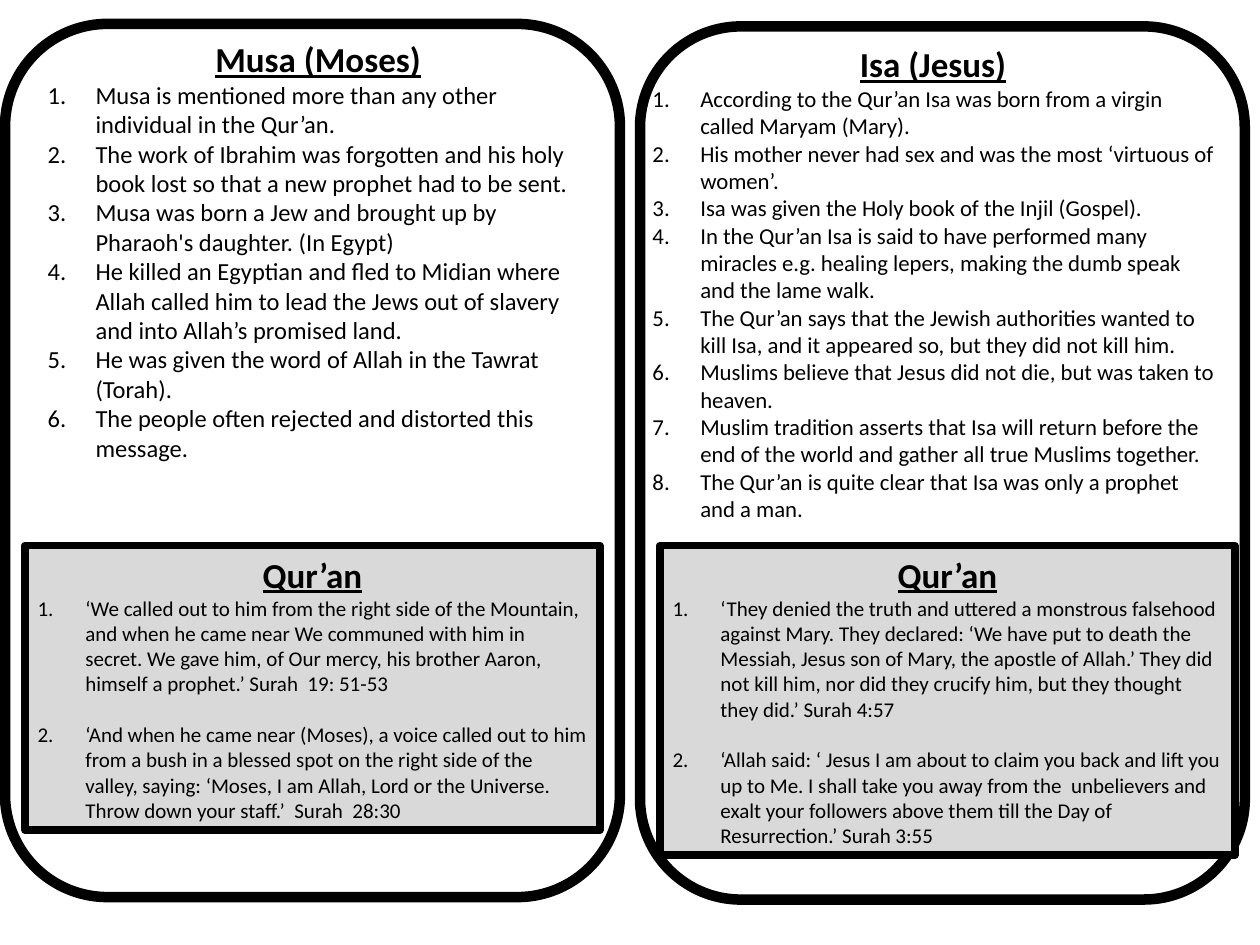
import pptx
import pptx.dml.color
import pptx.enum.shapes
import pptx.enum.text
import pptx.oxml
import pptx.oxml.ns
import pptx.util

COLUMNS, ROWS = 100, 75


def colour(hex_code):
    return pptx.dml.color.RGBColor.from_string(hex_code)


class ProphetSheet:
    """Draws cards, notes and quotations on a slide grid in one style."""

    font_name = "Calibri"
    ink, paper, shade = "000000", "FFFFFF", "D9D9D9"
    heading_size = 20
    indent = pptx.util.Inches(0.38)

    def __init__(self, deck):
        self.slide = deck.slides.add_slide(deck.slide_layouts[6])
        self.column = deck.slide_width / COLUMNS
        self.row = deck.slide_height / ROWS

    def place(self, left, top, width, height):
        return (round(left * self.column), round(top * self.row),
                round(width * self.column), round(height * self.row))

    def outlined(self, preset, area, fill, weight):
        shape = self.slide.shapes.add_shape(preset, *self.place(*area))
        shape.shadow.inherit = False
        shape.fill.solid()
        shape.fill.fore_color.rgb = colour(fill)
        shape.line.color.rgb = colour(self.ink)
        shape.line.width = pptx.util.Pt(weight)
        return shape

    def card(self, area):
        self.outlined(pptx.enum.shapes.MSO_SHAPE.ROUNDED_RECTANGLE, area, self.paper, 6)

    def notes(self, area, heading, points, size):
        box = self.slide.shapes.add_textbox(*self.place(*area))
        self.numbered_list(box.text_frame, heading, points, size, 0)

    def quotes(self, area, passages):
        box = self.outlined(pptx.enum.shapes.MSO_SHAPE.RECTANGLE, area, self.shade, 4.5)
        self.numbered_list(box.text_frame, "Qur’an", passages, 12, 14.65)

    def numbered_list(self, frame, heading, items, size, gap):
        frame.word_wrap = True
        frame.auto_size = pptx.enum.text.MSO_AUTO_SIZE.SHAPE_TO_FIT_TEXT
        title = frame.paragraphs[0]
        title.text = heading
        title.alignment = pptx.enum.text.PP_ALIGN.CENTER
        self.style(title, self.heading_size, True)
        for index, item in enumerate(items):
            point = frame.add_paragraph()
            point.text = item
            point.alignment = pptx.enum.text.PP_ALIGN.LEFT
            point.space_before = pptx.util.Pt(gap if index else 0)
            self.number(point)
            self.style(point, size, False)

    def number(self, paragraph):
        properties = paragraph._p.get_or_add_pPr()
        properties.set("marL", str(self.indent))
        properties.set("indent", str(-self.indent))
        properties.append(pptx.oxml.parse_xml(
            f'<a:buAutoNum {pptx.oxml.ns.nsdecls("a")} type="arabicPeriod"/>'))

    def style(self, paragraph, size, is_heading):
        font = paragraph.font
        font.name = self.font_name
        font.size = pptx.util.Pt(size)
        font.bold = font.underline = is_heading
        font.color.rgb = colour(self.ink)


MUSA_POINTS = [
    "Musa is mentioned more than any other individual in the Qur’an.",
    "The work of Ibrahim was forgotten and his holy book lost so that a new prophet "
    "had to be sent.",
    "Musa was born a Jew and brought up by Pharaoh's daughter. (In Egypt)",
    "He killed an Egyptian and fled to Midian where Allah called him to lead the Jews "
    "out of slavery and into Allah’s promised land.",
    "He was given the word of Allah in the Tawrat (Torah).",
    "The people often rejected and distorted this message.",
]
ISA_POINTS = [
    "According to the Qur’an Isa was born from a virgin called Maryam (Mary).",
    "His mother never had sex and was the most ‘virtuous of women’.",
    "Isa was given the Holy book of the Injil (Gospel).",
    "In the Qur’an Isa is said to have performed many miracles e.g. healing lepers, "
    "making the dumb speak and the lame walk.",
    "The Qur’an says that the Jewish authorities wanted to kill Isa, and it appeared so, "
    "but they did not kill him.",
    "Muslims believe that Jesus did not die, but was taken to heaven.",
    "Muslim tradition asserts that Isa will return before the end of the world and "
    "gather all true Muslims together.",
    "The Qur’an is quite clear that Isa was only a prophet and a man.",
]
MUSA_PASSAGES = [
    "‘We called out to him from the right side of the Mountain, and when he came near "
    "We communed with him in secret. We gave him, of Our mercy, his brother Aaron, "
    "himself a prophet.’ Surah  19: 51-53",
    "‘And when he came near (Moses), a voice called out to him from a bush in a blessed "
    "spot on the right side of the valley, saying: ‘Moses, I am Allah, Lord or the "
    "Universe. Throw down your staff.’  Surah  28:30",
]
ISA_PASSAGES = [
    "‘They denied the truth and uttered a monstrous falsehood against Mary. They "
    "declared: ‘We have put to death the Messiah, Jesus son of Mary, the apostle of "
    "Allah.’ They did not kill him, nor did they crucify him, but they thought they "
    "did.’ Surah 4:57",
    "‘Allah said: ‘ Jesus I am about to claim you back and lift you up to Me. I shall "
    "take you away from the  unbelievers and exalt your followers above them till the "
    "Day of Resurrection.’ Surah 3:55",
]


def main():
    deck = pptx.Presentation()
    deck.slide_width = pptx.util.Inches(10)
    deck.slide_height = pptx.util.Inches(7.5)
    sheet = ProphetSheet(deck)
    sheet.card((0.4, 1.9, 48.8, 69.3))
    sheet.card((50.8, 2.1, 48, 69.3))
    sheet.notes((50.8, 2.9, 46.5, 45.4), "Isa (Jesus)", ISA_POINTS, 13)
    sheet.notes((2.8, 2.5, 44.9, 35), "Musa (Moses)", MUSA_POINTS, 14)
    sheet.quotes((2, 43.3, 45.6, 22.6), MUSA_PASSAGES)
    sheet.quotes((52.4, 43.3, 45.6, 24.6), ISA_PASSAGES)
    deck.save("out.pptx")


if __name__ == "__main__":
    main()
